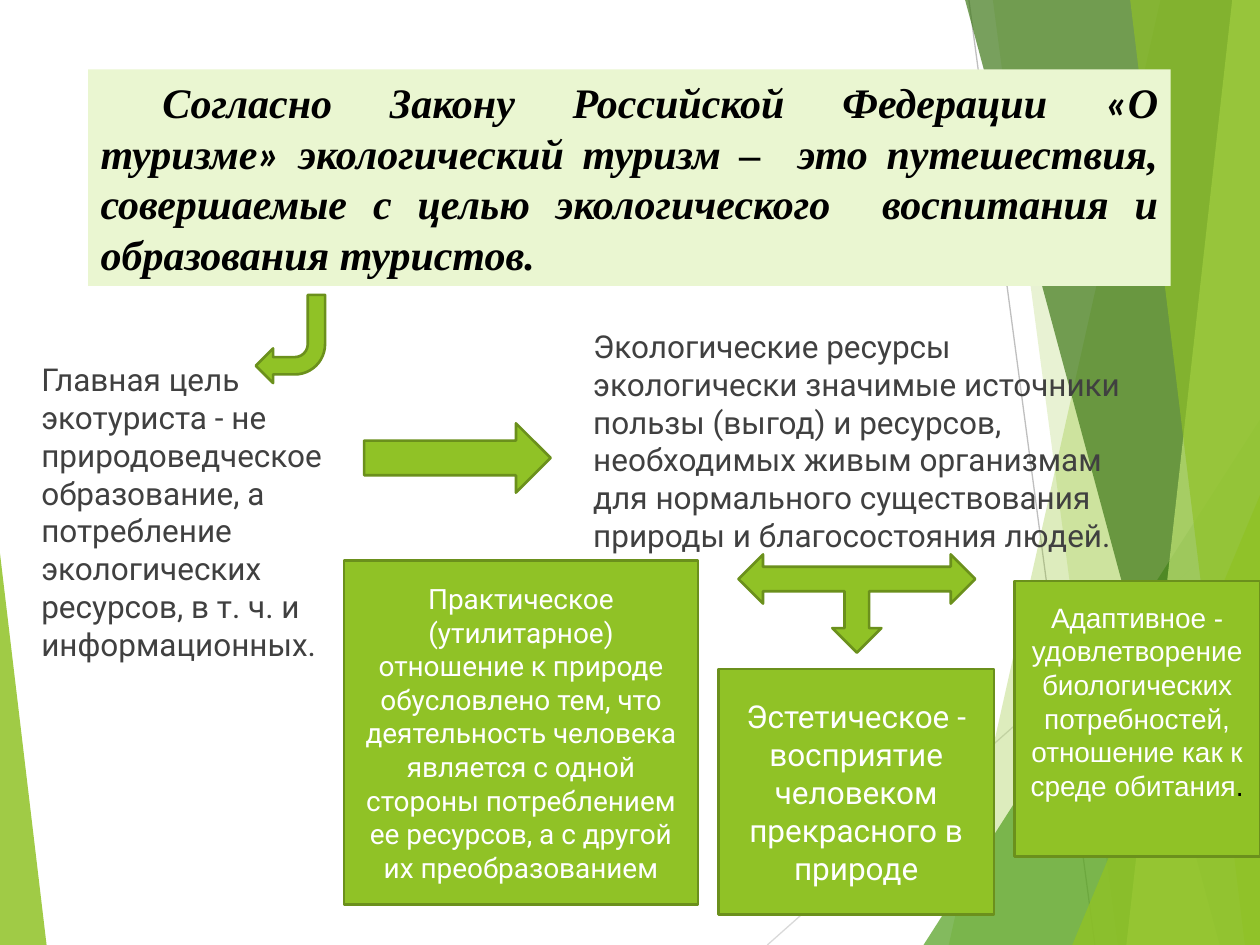
from dataclasses import dataclass

from lxml import etree
from pptx import Presentation
from pptx import util as u
from pptx.dml.color import RGBColor
from pptx.enum import shapes, text
from pptx.oxml import ns

FORM = shapes.MSO_SHAPE
MID = text.MSO_ANCHOR.MIDDLE
SIDE = text.PP_ALIGN


@dataclass(frozen=True)
class Theme:
    """Colours, fonts and type sizes."""
    green: str = "90C226"
    leaf: str = "54A021"
    dark: str = "3F7819"
    lime: str = "C0E474"
    pale: str = "EAF6D1"
    edge: str = "6B901C"
    ink: str = "404040"
    black: str = "000000"
    white: str = "FFFFFF"
    sans: str = "Roboto"
    plain: str = "Arial"
    serif: str = "Times New Roman"
    quote: str = "Calibri"
    head: int = 24
    body: int = 18
    small: int = 16


class Deck:
    """Draws on one slide with a grid of 100 columns by 75 rows."""

    def __init__(self, theme):
        """Open a blank slide."""
        self.theme = theme
        self.show = Presentation()
        self.show.slide_width, self.show.slide_height = u.Inches(10), u.Inches(7.5)
        self.cell = self.show.slide_width / 100
        self.slide = self.show.slides.add_slide(self.show.slide_layouts[6])

    def grid(self, *spans):
        """Turn grid steps into lengths."""
        return [round(span * self.cell) for span in spans]

    def paint(self, shape, fill, alpha=100, edge=None):
        """Set fill, opacity and outline."""
        shape.shadow.inherit = False
        shape.fill.solid()
        shape.fill.fore_color.rgb = RGBColor.from_string(fill)
        if alpha < 100:
            tone = shape._element.spPr.find(".//" + ns.qn("a:srgbClr"))
            etree.SubElement(tone, ns.qn("a:alpha"), val=str(alpha * 1000))
        if edge:
            shape.line.color.rgb = RGBColor.from_string(edge)
            shape.line.width = u.Pt(1.5)
        else:
            shape.line.fill.background()
        return shape

    def line(self, start, end, hue):
        """Draw a thin straight line."""
        link = self.slide.shapes.add_connector(
            shapes.MSO_CONNECTOR.STRAIGHT, *self.grid(*start, *end))
        link.line.color.rgb = RGBColor.from_string(hue)
        link.line.width = u.Pt(0.75)
        etree.SubElement(link._element.spPr, ns.qn("a:effectLst"))

    def band(self, top, foot, fill, alpha):
        """Draw a slanted band that reaches the right edge."""
        pen = self.slide.shapes.build_freeform(*self.grid(top, 0))
        pen.add_line_segments(
            [self.grid(*dot) for dot in ((100, 0), (100, 75), (foot, 75))])
        self.paint(pen.convert_to_shape(), fill, alpha)

    def wedge(self, left, top, width, apex, fill, alpha):
        """Draw a right triangle that stands on the bottom edge."""
        shape = self.form(FORM.ISOSCELES_TRIANGLE,
                          (left, top, width, 75 - top), fill, alpha)
        shape.adjustments[0] = apex

    def form(self, kind, area, fill, alpha=100, edge=None, turn=0):
        """Draw a preset shape."""
        shape = self.slide.shapes.add_shape(kind, *self.grid(*area))
        shape.rotation = turn
        return self.paint(shape, fill, alpha, edge)

    def arrow(self, kind, area, turn=0):
        """Draw an outlined arrow."""
        self.form(kind, area, self.theme.green, edge=self.theme.edge, turn=turn)

    def label(self, shape, runs, side, font, indent=0, **frame):
        """Fill a shape with one paragraph of (words, face, hue) runs."""
        for name, value in {"word_wrap": True, **frame}.items():
            setattr(shape.text_frame, name, value)
        para = shape.text_frame.paragraphs[0]
        para.alignment = side
        if indent:
            para._p.get_or_add_pPr().set("indent", str(self.grid(indent)[0]))
        for words, face, hue in runs:
            run = para.add_run()
            run.text = words
            for name, value in {**font, "name": face}.items():
                setattr(run.font, name, value)
            run.font.color.rgb = RGBColor.from_string(hue)

    def note(self, area, words, **frame):
        """Add plain body text."""
        box = self.slide.shapes.add_textbox(*self.grid(*area))
        self.label(box, [(words, self.theme.sans, self.theme.ink)], SIDE.LEFT,
                   {"size": u.Pt(self.theme.body)}, **frame)

    def card(self, area, runs, size, **frame):
        """Add a green box with centred text."""
        box = self.form(FORM.RECTANGLE, area, self.theme.green, edge=self.theme.edge)
        self.label(box, runs, SIDE.CENTER, {"size": u.Pt(size)},
                   vertical_anchor=MID, **frame)

    def title(self, area, runs):
        """Add the pale heading panel."""
        box = self.form(FORM.RECTANGLE, area, self.theme.pale)
        font = {"size": u.Pt(self.theme.head), "bold": True, "italic": True}
        self.label(box, [(*run, self.theme.black) for run in runs], SIDE.JUSTIFY,
                   font, indent=4.9, vertical_anchor=MID)


def main():
    """Build and save the slide."""
    theme = Theme()
    deck = Deck(theme)
    lift = u.Inches(0.33)

    deck.line((76.9, 0), (86.9, 75), "BFBFBF")
    deck.line((100, 40.3), (60.9, 75), "D9D9D9")
    deck.band(92.1, 75.3, theme.green, 30)
    deck.band(78.8, 88.7, theme.green, 20)
    deck.wedge(73.3, 33.3, 26.7, 1, theme.leaf, 72)
    deck.band(76.6, 96.8, theme.dark, 70)
    deck.band(97.8, 89.4, theme.lime, 70)
    deck.band(89.7, 98.8, theme.green, 65)
    deck.wedge(85.1, 39.3, 14.9, 1, theme.green, 80)
    deck.wedge(0, 43.9, 3.7, 0, theme.green, 85)

    deck.note((46.1, 25, 46.1, 22.7),
              "Экологические ресурсы экологически значимые источники пользы "
              "(выгод) и ресурсов, необходимых живым организмам для нормального "
              "существования природы и благосостояния людей.",
              vertical_anchor=MID, margin_bottom=lift)
    deck.title((7, 5.5, 85.9, 17.2), [
        ("Согласно Закону Российской Федерации ", theme.serif),
        ("«", theme.quote),
        ("О туризме", theme.serif),
        ("»", theme.quote),
        (" экологический туризм –  это путешествия, совершаемые с целью "
         "экологического  воспитания и образования туристов.", theme.serif)])
    deck.note((2.3, 28.1, 29.7, 26),
              "Главная цель экотуриста - не природоведческое образование, а "
              "потребление экологических ресурсов, в т. ч. и информационных.")

    deck.arrow(FORM.RIGHT_ARROW, (28.9, 33.6, 14.8, 5.5))
    deck.arrow(FORM.BENT_ARROW, (20.3, 23.4, 5.5, 7), 180)
    deck.arrow(FORM.LEFT_RIGHT_UP_ARROW, (58.6, 44, 18.8, 7.8), 180)

    deck.card((27.3, 44.5, 28.1, 27.3), [
        ("Практическое (утилитарное) отношение к природе обусловлено тем, что "
         "деятельность человека является с одной стороны потреблением ее "
         "ресурсов, а с другой их преобразованием", theme.sans, theme.white)],
        theme.small)
    deck.card((57, 53.1, 21.9, 19.5), [
        ("Эстетическое - восприятие человеком прекрасного в природе",
         theme.sans, theme.white)], theme.body)
    deck.card((80.5, 46.1, 19.5, 21.9), [
        ("Адаптивное - удовлетворение биологических потребностей, отношение "
         "как к среде обитания", theme.plain, theme.white),
        (".", theme.plain, theme.black)], theme.small, margin_bottom=lift)

    deck.show.save("out.pptx")


if __name__ == "__main__":
    main()
